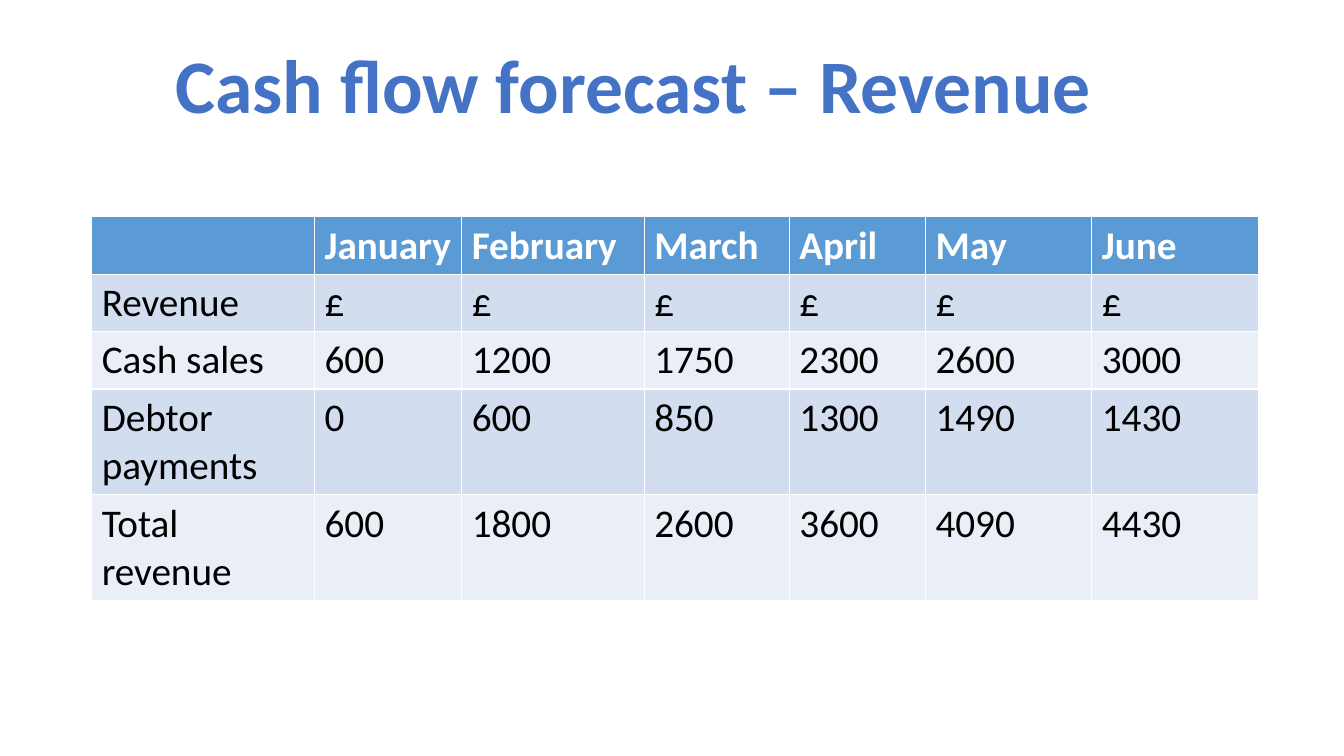
from dataclasses import dataclass

from lxml import etree
from pptx import Presentation
from pptx import util as u
from pptx.dml.color import RGBColor
from pptx.enum import text
from pptx.oxml import ns


@dataclass(frozen=True)
class Theme:
    font: str = "Calibri"
    title: str = "4472C4"
    head: str = "5B9BD5"
    bands: tuple = ("D2DEEF", "EAEFF7")
    light: str = "FFFFFF"
    dark: str = "000000"
    big: int = 54
    body: int = 28


THEME = Theme()
MONTHS = ["January", "February", "March", "April", "May", "June"]
ROWS = [
    ["", *MONTHS],
    ["Revenue", *["£"] * len(MONTHS)],
    ["Cash sales", 600, 1200, 1750, 2300, 2600, 3000],
    ["Debtor payments", 0, 600, 850, 1300, 1490, 1430],
    ["Total revenue", 600, 1800, 2600, 3600, 4090, 4430],
]
WIDTHS = [2.21, 1.46, 1.81, 1.44, 1.35, 1.65, 1.65]
HEIGHTS = [0.57, 0.57, 0.57, 1.05, 1.05]


def style(para, size, color, bold):
    font = para.font
    font.name, font.size, font.bold = THEME.font, u.Pt(size), bold
    font.color.rgb = RGBColor.from_string(color)


def outline(run, color, width):
    """Give the letters of a run a thin line."""
    line = etree.Element(ns.qn("a:ln"), w=str(u.Pt(width)))
    fill = etree.SubElement(line, ns.qn("a:solidFill"))
    etree.SubElement(fill, ns.qn("a:srgbClr"), val=color)
    run._r.get_or_add_rPr().insert(0, line)


def add_title(slide, words):
    title = slide.shapes.title
    title.left, title.top = u.Inches(1.59), u.Inches(0.32)
    title.width, title.height = u.Inches(9.55), u.Inches(1.01)
    frame = title.text_frame
    frame.text = words
    frame.word_wrap = False
    frame.auto_size = text.MSO_AUTO_SIZE.SHAPE_TO_FIT_TEXT
    para = frame.paragraphs[0]
    para.alignment = text.PP_ALIGN.CENTER
    style(para, THEME.big, THEME.title, True)
    outline(para.runs[0], THEME.light, 0.75)


def add_grid(slide, rows):
    table = slide.shapes.add_table(
        len(rows), len(WIDTHS), u.Inches(0.91), u.Inches(2.15),
        u.Inches(sum(WIDTHS)), u.Inches(sum(HEIGHTS))).table
    for col, width in zip(table.columns, WIDTHS):
        col.width = u.Inches(width)
    for i, (row, height) in enumerate(zip(table.rows, HEIGHTS)):
        row.height = u.Inches(height)
        head = i == 0
        fill = THEME.head if head else THEME.bands[(i - 1) % 2]
        for cell, value in zip(row.cells, rows[i]):
            cell.text = str(value)
            cell.fill.solid()
            cell.fill.fore_color.rgb = RGBColor.from_string(fill)
            style(cell.text_frame.paragraphs[0], THEME.body,
                  THEME.light if head else THEME.dark, head)


def main():
    deck = Presentation()
    deck.slide_width, deck.slide_height = u.Inches(13.33), u.Inches(7.5)
    slide = deck.slides.add_slide(deck.slide_layouts.get_by_name("Title Only"))
    add_title(slide, "Cash flow forecast – Revenue ")
    add_grid(slide, ROWS)
    deck.save("out.pptx")


if __name__ == "__main__":
    main()
